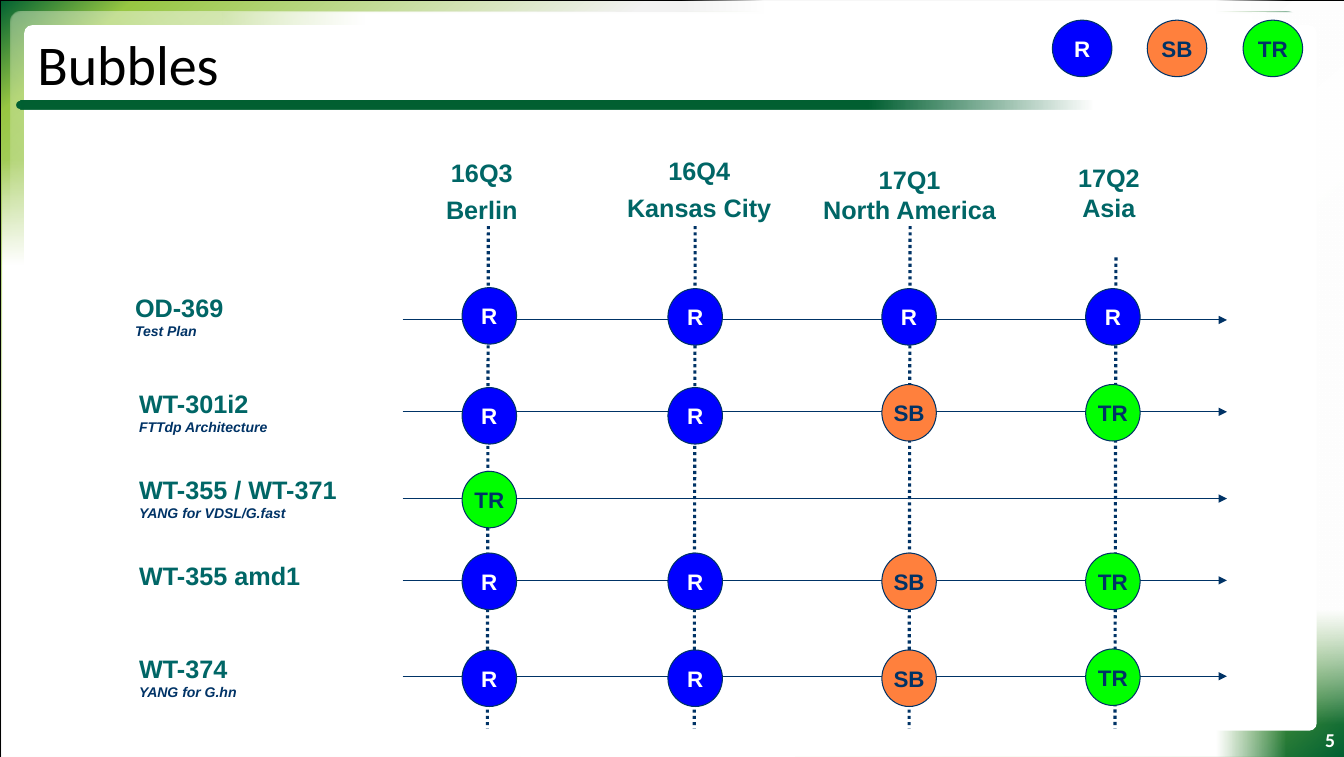
from dataclasses import dataclass
from typing import Optional

from lxml import etree
from pptx import Presentation
from pptx import util as u
from pptx.dml.color import RGBColor
from pptx.enum import dml, shapes, text
from pptx.oxml import ns

COLORS = {
    "green": "006032", "lime": "97C642", "mist": "F2F2F2", "white": "FFFFFF",
    "black": "000000", "navy": "003366", "teal": "006666",
    "blue": "0000FF", "orange": "FF803D", "bright": "00FF00",
}
BUBBLE_STYLES = {"R": ("blue", "white"), "SB": ("orange", "navy"), "TR": ("bright", "navy")}
COLUMN_LEFTS = (4.58, 6.62, 8.74, 10.76)
BUBBLE_WIDTH, BUBBLE_HEIGHT = 0.54, 0.56
ARROW_LEFT, ARROW_RIGHT = 3.99, 12.16
GUIDE_BOTTOM = 7.22

Box = tuple[float, float, float, float]
Stop = tuple[int, str, int]


@dataclass
class Panel:
    box: Box
    stops: tuple[Stop, ...]
    angle: int = 0
    kind: shapes.MSO_SHAPE = shapes.MSO_SHAPE.RECTANGLE
    corner: Optional[float] = None
    outlined: bool = False


@dataclass
class Quarter:
    lines: tuple[str, ...]
    box: Box
    guide_x: float
    guide_top: float = 2.24


@dataclass
class Track:
    name: str
    note: str
    label: Box
    arrow_y: float
    bubbles: tuple[str, ...]
    tops: tuple[float, ...]


PLAIN = ((0, "white", 100), (100, "white", 100))
ROUNDED = shapes.MSO_SHAPE.ROUNDED_RECTANGLE
PANELS = (
    Panel((0, 0, 13.33, 7.5), ((0, "green", 100), (6, "lime", 100), (29, "mist", 100),
          (69, "white", 100), (87, "lime", 100), (100, "green", 100)), 50, outlined=True),
    Panel((0.11, 0.12, 12.74, 6.44), ((0, "green", 48), (6, "lime", 52), (34, "mist", 50),
          (62, "white", 48), (91, "lime", 51), (100, "green", 52)), 140, ROUNDED, 0.017),
    Panel((1.66, 0.12, 10.89, 6.88), ((5, "white", 0), (18, "white", 100), (89, "white", 100))),
    Panel((0.03, 1, 6.54, 6.5), ((9, "white", 0), (25, "white", 100), (87, "white", 100)), 90),
    Panel((6.44, 0.01, 6.3, 7.49), ((5, "white", 0), (18, "white", 100),
          (89, "white", 100), (100, "white", 0))),
    Panel((12.41, 0.12, 0.92, 7.12), ((1, "white", 0), (17, "white", 100), (87, "white", 100)), 270),
    Panel((0.24, 0.25, 12.81, 6.99), PLAIN, 0, ROUNDED, 0.011),
    Panel((5.63, 6.92, 2.25, 0.58), PLAIN),
    Panel((0.16, 1, 0.08, 0.08), ((0, "green", 100), (100, "green", 100)), 0, shapes.MSO_SHAPE.OVAL),
    Panel((0.2, 1, 10.63, 0.08), ((0, "green", 0), (21, "green", 100), (100, "green", 100)), 180),
)
QUARTERS = (
    Quarter(("16Q3", "Berlin"), (4.14, 1.51, 1.27, 0.77), 4.84),
    Quarter(("16Q4", "Kansas City"), (6.11, 1.49, 1.64, 0.77), 6.89),
    Quarter(("17Q1\vNorth America",), (8.05, 1.58, 1.93, 0.71), 9.02),
    Quarter(("17Q2\vAsia",), (10.58, 1.56, 0.82, 0.71), 11.06, 2.55),
)
TRACKS = (
    Track("OD-369", "Test Plan", (1.24, 2.85, 1.08, 0.57), 3.17,
          ("R", "R", "R", "R"), (2.85, 2.86, 2.86, 2.86)),
    Track("WT-301i2", "FTTdp Architecture", (1.28, 3.8, 1.49, 0.57), 4.08,
          ("R", "R", "SB", "TR"), (3.84, 3.84, 3.81, 3.81)),
    Track("WT-355 / WT-371", "YANG for VDSL/G.fast", (1.28, 4.65, 2.18, 0.57), 4.94,
          ("TR",), (4.67,)),
    Track("WT-355 amd1", "", (1.28, 5.5, 1.81, 0.41), 5.75,
          ("R", "R", "SB", "TR"), (5.48,) * 4),
    Track("WT-374", "YANG for G.hn", (1.28, 6.42, 1.19, 0.57), 6.7,
          ("R", "R", "SB", "TR"), (6.44, 6.44, 6.44, 6.43)),
)
LEGEND = (("R", 10.43), ("SB", 11.37), ("TR", 12.32))


def rgb(name: str) -> RGBColor:
    return RGBColor.from_string(COLORS[name])


def inches(box: Box) -> list[u.Length]:
    return [u.Inches(value) for value in box]


def style(paragraph, size: float, color: str, bold: bool = True,
          italic: bool = False, face: str = "Arial") -> None:
    font = paragraph.font
    font.name, font.size, font.bold, font.italic = face, u.Pt(size), bold, italic
    font.color.rgb = rgb(color)


def add_panel(slide, panel: Panel) -> None:
    shape = slide.shapes.add_shape(panel.kind, *inches(panel.box))
    shape.shadow.inherit = False
    if panel.corner is not None:
        shape.adjustments[0] = panel.corner
    if panel.outlined:
        shape.line.color.rgb = rgb("black")
        shape.line.width = u.Pt(0.25)
    else:
        shape.line.fill.background()
    if len({stop[1:] for stop in panel.stops}) == 1:
        shape.fill.solid()
        shape.fill.fore_color.rgb = rgb(panel.stops[0][1])
        return
    shape.fill.gradient()
    gradient = shape._element.spPr.find(ns.qn("a:gradFill"))
    for child in list(gradient):
        gradient.remove(child)
    stop_list = etree.SubElement(gradient, ns.qn("a:gsLst"))
    for position, color, opacity in panel.stops:
        stop = etree.SubElement(stop_list, ns.qn("a:gs"), pos=str(position * 1000))
        value = etree.SubElement(stop, ns.qn("a:srgbClr"), val=COLORS[color])
        etree.SubElement(value, ns.qn("a:alpha"), val=str(opacity * 1000))
    etree.SubElement(gradient, ns.qn("a:lin"), ang=str(panel.angle * 60000), scaled="0")


def add_lines(slide, lines: tuple[str, ...], box: Box,
              alignment: text.PP_ALIGN = text.PP_ALIGN.LEFT):
    frame = slide.shapes.add_textbox(*inches(box)).text_frame
    frame.word_wrap = False
    frame.text = "\n".join(lines)
    for paragraph in frame.paragraphs:
        paragraph.alignment = alignment
        style(paragraph, 18, "teal")
    return frame.paragraphs


def add_line(slide, start: tuple[float, float], end: tuple[float, float],
             width: float, arrow: bool) -> None:
    connector = slide.shapes.add_connector(
        shapes.MSO_CONNECTOR.STRAIGHT, *inches(start + end))
    connector.line.color.rgb = rgb("navy")
    connector.line.width = u.Pt(width)
    properties = connector._element.spPr
    if arrow:
        etree.SubElement(properties.find(ns.qn("a:ln")), ns.qn("a:tailEnd"), type="triangle")
    else:
        connector.line.dash_style = dml.MSO_LINE.ROUND_DOT
    etree.SubElement(properties, ns.qn("a:effectLst"))


def add_bubble(slide, kind: str, left: float, top: float, width: float = BUBBLE_WIDTH) -> None:
    fill, ink = BUBBLE_STYLES[kind]
    shape = slide.shapes.add_shape(
        shapes.MSO_SHAPE.OVAL, *inches((left, top, width, BUBBLE_HEIGHT)))
    shape.shadow.inherit = False
    shape.fill.solid()
    shape.fill.fore_color.rgb = rgb(fill)
    shape.line.color.rgb = rgb("navy")
    shape.line.width = u.Pt(0.75)
    frame = shape.text_frame
    frame.word_wrap = False
    frame.vertical_anchor = text.MSO_ANCHOR.MIDDLE
    frame.text = kind
    frame.paragraphs[0].alignment = text.PP_ALIGN.CENTER
    style(frame.paragraphs[0], 16, ink)


def add_title(slide, words: str) -> None:
    title = slide.shapes.title
    slide.shapes._spTree.append(title._element)
    title.left, title.top, title.width, title.height = inches((0.24, 0.25, 12.22, 0.75))
    frame = title.text_frame
    frame.text = words
    frame.vertical_anchor = text.MSO_ANCHOR.MIDDLE
    frame.margin_left = frame.margin_right = u.Inches(0.13)
    frame.margin_top = frame.margin_bottom = u.Inches(0.07)
    frame.paragraphs[0].alignment = text.PP_ALIGN.LEFT
    style(frame.paragraphs[0], 40, "black", bold=False, face="Calibri")


def main() -> None:
    presentation = Presentation()
    presentation.slide_width, presentation.slide_height = u.Inches(13.32), u.Inches(7.5)
    slide = presentation.slides.add_slide(presentation.slide_layouts[5])
    for panel in PANELS:
        add_panel(slide, panel)
    add_title(slide, "Bubbles")
    number = add_lines(slide, ("5",), (12.83, 7.16, 0.5, 0.34), text.PP_ALIGN.RIGHT)[0]
    style(number, 14, "white", face="Calibri")
    for kind, left in LEGEND:
        add_bubble(slide, kind, left, 0.2, 0.59)
    for quarter in QUARTERS:
        add_line(slide, (quarter.guide_x, quarter.guide_top),
                 (quarter.guide_x - 0.01, GUIDE_BOTTOM), 2.25, arrow=False)
        for paragraph in add_lines(slide, quarter.lines, quarter.box, text.PP_ALIGN.CENTER)[1:]:
            paragraph.space_before = u.Pt(4.5)
    for track in TRACKS:
        lines = (track.name, track.note) if track.note else (track.name,)
        for paragraph in add_lines(slide, lines, track.label)[1:]:
            style(paragraph, 10, "navy", italic=True)
        add_line(slide, (ARROW_LEFT, track.arrow_y), (ARROW_RIGHT, track.arrow_y), 0.75, arrow=True)
        for kind, left, top in zip(track.bubbles, COLUMN_LEFTS, track.tops):
            add_bubble(slide, kind, left, top)
    presentation.save("out.pptx")


if __name__ == "__main__":
    main()
